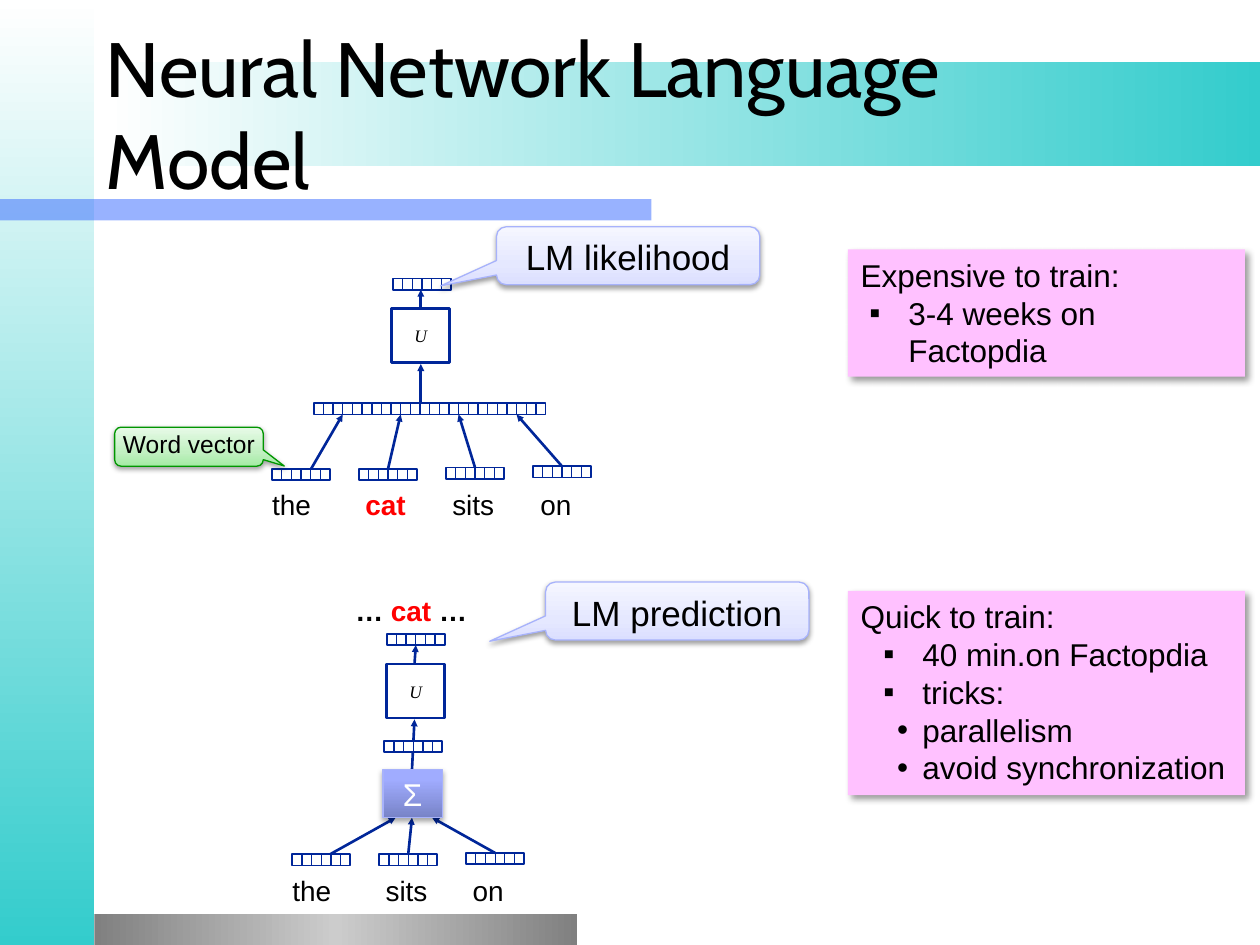
from dataclasses import dataclass

from lxml.etree import SubElement
from pptx import Presentation
from pptx.dml.color import RGBColor
from pptx.enum.shapes import MSO_CONNECTOR as Line, MSO_SHAPE as Preset
from pptx.enum.text import MSO_ANCHOR as Anchor, MSO_AUTO_SIZE as Fit, PP_ALIGN as Align
from pptx.oxml.ns import qn
from pptx.util import Inches, Pt


@dataclass(frozen=True)
class Theme:
    sans: str = "Arial"
    serif: str = "Times New Roman"
    heading: str = "Cabin"
    black: str = "000000"
    white: str = "FFFFFF"
    red: str = "FF0000"
    navy: str = "002699"
    teal: str = "33CCCC"
    band: str = "3366FF"
    pink: str = "FFC1FF"
    lilac_line: str = "A7B2FB"
    green_line: str = "009600"
    lilac: tuple = ((0, "DBDFFF"), (35, "E5E8FF"), (100, "F5F6FF"))
    green: tuple = ((0, "A5EBA5"), (35, "C1F0C1"), (100, "E7FAE7"))
    violet: tuple = ((0, "7883C7"), (80, "A0ACFF"), (100, "A2AEFF"))
    gray: tuple = ((0, "808080"), (50, "CCCCCC"), (100, "808080"))
    title_size: int = 44
    callout_size: int = 20
    body_size: int = 18
    word_size: int = 16
    note_size: int = 14
    unit_size: int = 10


THEME = Theme()
FADE = ((0, THEME.white), (100, THEME.teal))
VECTOR_WIDTH, VECTOR_HEIGHT, VECTOR_CELLS = 0.46, 0.09, 6
WORD_STEP = 0.69


def rgb(code):
    return RGBColor.from_string(code)


def inches(*lengths):
    return [Inches(length) for length in lengths]


# Fills, lines and shadows
def paint(shape, fill=None, line=None, width=0.75, angle=270):
    """Fill with nothing, one colour or gradient stops, and draw the outline."""
    if fill is None:
        shape.fill.background()
    elif isinstance(fill, str):
        shape.fill.solid()
        shape.fill.fore_color.rgb = rgb(fill)
    else:
        shape.fill.gradient()
        shape.fill.gradient_angle = -angle % 360
        stops = shape._element.spPr.find(".//" + qn("a:gsLst"))
        for old in list(stops):
            stops.remove(old)
        for position, code in fill:
            stop = SubElement(stops, qn("a:gs"), pos=str(position * 1000))
            SubElement(stop, qn("a:srgbClr"), val=code)
    if line:
        shape.line.color.rgb = rgb(line)
        shape.line.width = Pt(width)
    else:
        shape.line.fill.background()


def set_alpha(color, percent):
    SubElement(color, qn("a:alpha"), val=str(percent * 1000))


def cast_shadow(shape, alpha, blur, distance, angle):
    shape.shadow.inherit = False
    effects = shape._element.spPr.find(qn("a:effectLst"))
    outer = SubElement(effects, qn("a:outerShdw"), blurRad=str(Pt(blur)),
                       dist=str(Pt(distance)), dir=str(angle * 60000), rotWithShape="0")
    set_alpha(SubElement(outer, qn("a:srgbClr"), val=THEME.black), alpha)


# Text
def set_fonts(paragraph, size, name=THEME.sans, color=THEME.black, italic=None):
    for font in [paragraph.font] + [span.font for span in paragraph.runs]:
        font.name, font.size, font.italic = name, Pt(size), italic
        font.color.rgb = rgb(color)


def set_frame(frame, anchor=Anchor.TOP, margins=(0.1, 0.05), fit=Fit.NONE):
    frame.word_wrap, frame.vertical_anchor, frame.auto_size = True, anchor, fit
    frame.margin_left = frame.margin_right = Inches(margins[0])
    frame.margin_top = frame.margin_bottom = Inches(margins[1])


def write_label(shape, text, size, **style):
    paragraph = shape.text_frame.paragraphs[0]
    paragraph.text, paragraph.alignment = text, Align.CENTER
    set_fonts(paragraph, size, **style)


def add_words(page, left, top, width, spans, stops=(), bold=False):
    """A row of words; tab characters jump to the given stops."""
    box = page.shapes.add_textbox(*inches(left, top, width, 0.27))
    set_frame(box.text_frame, margins=(0, 0), fit=Fit.SHAPE_TO_FIT_TEXT)
    paragraph = box.text_frame.paragraphs[0]
    if stops:
        tabs = SubElement(paragraph._p.get_or_add_pPr(), qn("a:tabLst"))
        for stop in stops:
            SubElement(tabs, qn("a:tab"), pos=str(Inches(stop)), algn="l")
    for text in spans:
        paragraph.add_run().text = text
    set_fonts(paragraph, THEME.word_size)
    for span in paragraph.runs:
        span.font.bold = bold
        if span.text.strip() == "cat":
            span.font.bold, span.font.color.rgb = True, rgb(THEME.red)


# Diagram parts
def add_box(shapes, area, fill=None, line=None, width=0.75, angle=270, preset=Preset.RECTANGLE):
    box = shapes.add_shape(preset, *inches(*area))
    box.shadow.inherit = False
    paint(box, fill, line, width, angle)
    return box


def add_line(shapes, start, end, width=0.75, arrow=False):
    line = shapes.add_connector(Line.STRAIGHT, *inches(*start, *end))
    line.line.color.rgb, line.line.width = rgb(THEME.navy), Pt(width)
    properties = line._element.spPr
    if arrow:
        SubElement(properties.find(qn("a:ln")), qn("a:tailEnd"),
                   type="triangle", w="sm", len="sm")
    SubElement(properties, qn("a:effectLst"))


def add_arrow(page, start, end):
    add_line(page.shapes, start, end, 1.5, arrow=True)


def add_vector(page, left, top, fill=THEME.white):
    parts = page.shapes.add_group_shape().shapes
    add_box(parts, (left, top, VECTOR_WIDTH, VECTOR_HEIGHT), fill, THEME.navy, 1)
    for cell in range(1, VECTOR_CELLS):
        x = left + cell * VECTOR_WIDTH / VECTOR_CELLS
        add_line(parts, (x, top), (x, top + VECTOR_HEIGHT))


def add_unit(page, left, top):
    unit = add_box(page.shapes, (left, top, 0.46, 0.43), THEME.white, THEME.navy, 1.5)
    set_frame(unit.text_frame, Anchor.MIDDLE)
    write_label(unit, "U", THEME.unit_size, name=THEME.serif, italic=True)


def add_callout(page, area, text, tip, fill=THEME.lilac, line=THEME.lilac_line,
                size=THEME.callout_size, margins=(0.1, 0.05)):
    callout = add_box(page.shapes, area, fill, line, preset=Preset.ROUNDED_RECTANGULAR_CALLOUT)
    for index, value in enumerate((*tip, 0.167)):
        callout.adjustments[index] = value
    cast_shadow(callout, 38, 3.1, 1.6, 90)
    set_frame(callout.text_frame, margins=margins)
    write_label(callout, text, size)


def fill_panel(panel, area, heading, items):
    """Items are (level, left margin, hanging indent, bullet, text)."""
    panel.left, panel.top, panel.width, panel.height = inches(*area)
    paint(panel, THEME.pink)
    cast_shadow(panel, 40, 4, 3, 45)
    frame = panel.text_frame
    set_frame(frame)
    for index, (level, margin, hang, bullet, text) in enumerate([(0, 0, 0, None, heading), *items]):
        paragraph = frame.add_paragraph() if index else frame.paragraphs[0]
        paragraph.text, paragraph.level = text, level
        paragraph.space_before = Pt(0)
        properties = paragraph._p.get_or_add_pPr()
        properties.set("marL", str(Inches(margin)))
        properties.set("indent", str(Inches(-hang)))
        if bullet:
            SubElement(properties, qn("a:buFont"), typeface=THEME.sans)
            SubElement(properties, qn("a:buChar"), char=bullet)
        else:
            SubElement(properties, qn("a:buNone"))
        set_fonts(paragraph, THEME.body_size)


# Slide sections
def add_backdrop(page):
    add_box(page.shapes, (0, 0, 0.75, 7.5), FADE, angle=90)
    band = add_box(page.shapes, (0, 1.58, 5.17, 0.17), THEME.band)
    set_alpha(band._element.spPr.find(".//" + qn("a:srgbClr")), 50)
    add_box(page.shapes, (0.75, 7.25, 3.83, 0.25), THEME.gray, angle=0)
    add_box(page.shapes, (0.84, 0.49, 9.16, 0.83), FADE, angle=0)


def add_title(page, text):
    title = page.shapes.title
    title.left, title.top, title.width, title.height = inches(0.74, 0.27, 8.5, 1.25)
    set_frame(title.text_frame, Anchor.MIDDLE)
    write_label(title, text, THEME.title_size, name=THEME.heading)
    title.text_frame.paragraphs[0].alignment = Align.LEFT
    page.shapes._spTree.append(title._element)  # in front of the backdrop


def add_likelihood_model(page):
    for index, top in enumerate((3.72, 3.72, 3.71, 3.7)):
        add_vector(page, 2.16 + index * WORD_STEP, top)
        add_vector(page, 2.49 + index * VECTOR_WIDTH, 3.2)
        start = 2.47 if index == 0 else 2.39 + index * WORD_STEP
        add_arrow(page, (start, top), (2.72 + index * VECTOR_WIDTH, 3.29))
    add_vector(page, 3.12, 2.21, fill=None)
    add_unit(page, 3.11, 2.45)
    add_arrow(page, (3.34, 3.2), (3.34, 2.89))
    add_arrow(page, (3.34, 2.45), (3.34, 2.3))
    add_words(page, 2.16, 3.87, 2.6, ("the\t", "cat", "\tsits\ton"), (0.74, 1.43, 2.13))
    add_callout(page, (3.94, 1.8, 2.09, 0.46), "LM likelihood", (-0.712, 0.521))
    add_callout(page, (0.91, 3.39, 1.18, 0.31), "Word vector", (0.641, 0.495),
                THEME.green, THEME.green_line, THEME.note_size, (0, 0))


def add_prediction_model(page):
    inputs = ((6.78, 2.62, 3.14), (6.78, 3.24, 3.27), (6.77, 3.93, 3.43))
    for index, (top, start, end) in enumerate(inputs):
        add_vector(page, 2.32 + index * WORD_STEP, top)
        add_arrow(page, (start, top), (end, 6.49))
    add_vector(page, 3.07, 5.03, fill=None)
    add_unit(page, 3.07, 5.27)
    add_arrow(page, (3.27, 6.11), (3.29, 5.71))
    add_vector(page, 3.05, 5.88)
    add_arrow(page, (3.29, 5.27), (3.3, 5.12))
    add_words(page, 2.32, 6.93, 1.98, ("the\tsits\ton",), (0.74, 1.43))
    add_words(page, 2.82, 4.71, 0.96, ("…", " cat", " …"), bold=True)
    add_callout(page, (4.33, 4.62, 2.09, 0.46), "LM prediction", (-0.712, 0.521))
    total = add_box(page.shapes, (3.04, 6.11, 0.47, 0.38), THEME.violet, THEME.lilac_line)
    cast_shadow(total, 35, 3.1, 1.8, 90)
    set_frame(total.text_frame, Anchor.MIDDLE, (0.08, 0.04))
    write_label(total, "Σ", THEME.body_size, color=THEME.white)


def main():
    deck = Presentation()
    deck.slide_width, deck.slide_height = inches(10, 7.5)
    page = deck.slides.add_slide(deck.slide_layouts[3])
    add_backdrop(page)
    add_title(page, "Neural Network Language Model")
    add_likelihood_model(page)
    add_prediction_model(page)
    slow, quick = page.placeholders[1], page.placeholders[2]
    fill_panel(slow, (6.73, 1.98, 3.15, 1.01), "Expensive to train:",
               [(1, 0.38, 0.31, "▪", "3-4 weeks on Factopdia")])
    fill_panel(quick, (6.73, 4.69, 3.15, 1.62), "Quick to train:",
               [(1, 0.49, 0.31, "▪", text) for text in ("40 min.on Factopdia", "tricks:")]
               + [(2, 0.49, 0.2, "•", text) for text in ("parallelism", "avoid synchronization")])
    deck.save("out.pptx")


if __name__ == "__main__":
    main()
